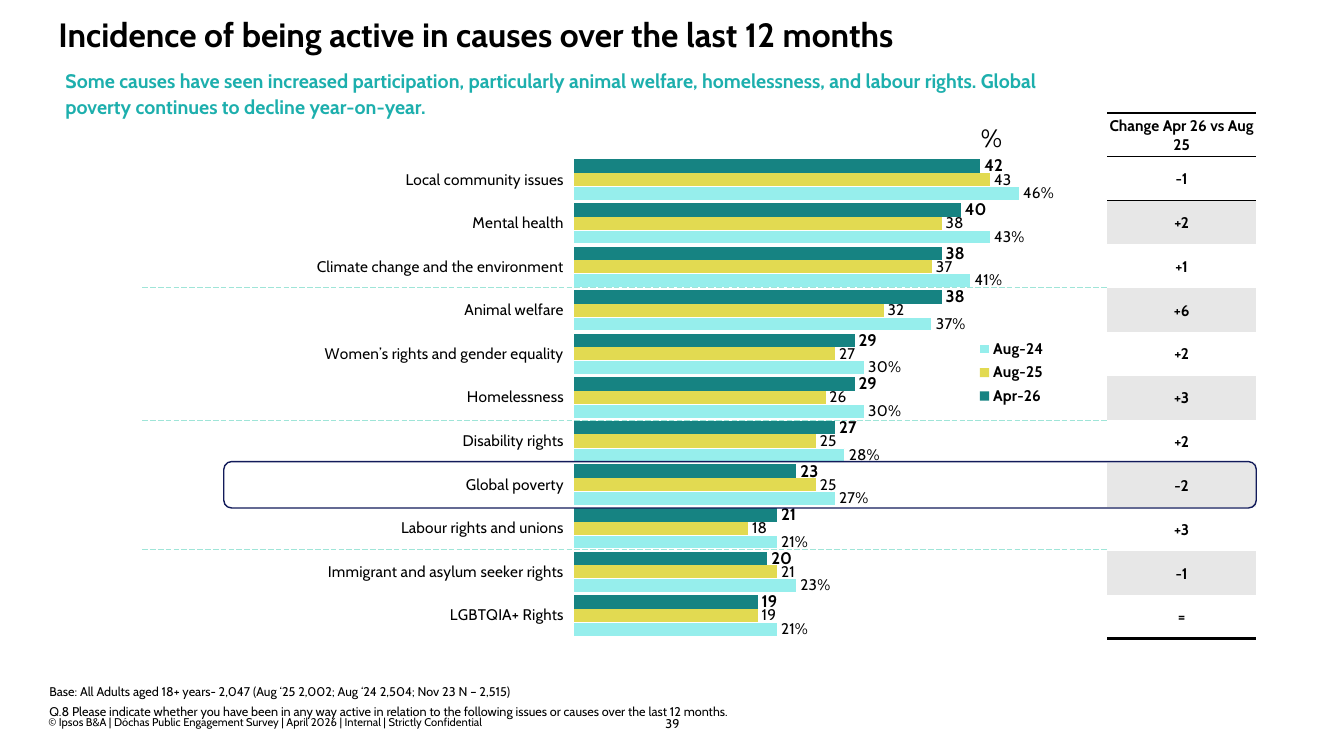
from lxml.etree import SubElement
from pptx import Presentation
from pptx.chart.data import CategoryChartData
from pptx.dml.color import RGBColor
from pptx.enum.chart import XL_CHART_TYPE, XL_LABEL_POSITION, XL_LEGEND_POSITION
from pptx.enum.dml import MSO_LINE
from pptx.enum.shapes import MSO_CONNECTOR, MSO_SHAPE
from pptx.enum.text import MSO_ANCHOR, PP_ALIGN
from pptx.oxml import parse_xml
from pptx.oxml.ns import nsdecls, qn
from pptx.util import Pt

PX = 9144  # EMU per px, 100 px to the inch
FONT = "Cabin"
BLACK = RGBColor(0, 0, 0)
WHITE = RGBColor(0xFF, 0xFF, 0xFF)
GREY = RGBColor(0xE7, 0xE7, 0xE7)
TURQUOISE = RGBColor(0x1D, 0xAF, 0xAD)
MINT = RGBColor(0x9F, 0xE5, 0xD8)
NAVY = RGBColor(0x12, 0x1B, 0x5A)
TEAL = RGBColor(0x16, 0x83, 0x82)
YELLOW = RGBColor(0xE2, 0xDA, 0x51)
AQUA = RGBColor(0x96, 0xEE, 0xEC)

# Wave name, bar colour, label number format
WAVES = [("Apr-26", TEAL, "#,##0"), ("Aug-25", YELLOW, "General"), ("Aug-24", AQUA, '#"%"')]
# Cause, one value per wave, change on the year
CAUSES = [
    ("Local community issues", (42, 43, 46), "-1"),
    ("Mental health", (40, 38, 43), "+2"),
    ("Climate change and the environment", (38, 37, 41), "+1"),
    ("Animal welfare", (38, 32, 37), "+6"),
    ("Women’s rights and gender equality", (29, 27, 30), "+2"),
    ("Homelessness", (29, 26, 30), "+3"),
    ("Disability rights", (27, 25, 28), "+2"),
    ("Global poverty", (23, 25, 27), "-2"),
    ("Labour rights and unions", (21, 18, 21), "+3"),
    ("Immigrant and asylum seeker rights", (20, 21, 23), "-1"),
    ("LGBTQIA+ Rights", (19, 19, 21), "="),
]


def px(*lengths):
    return [n * PX for n in lengths]


def style(font, size, color=BLACK, bold=False):
    font.name, font.size, font.bold = FONT, Pt(size), bold
    font.color.rgb = color


def add_text(slide, box, lines, size, color=BLACK, bold=False, align=PP_ALIGN.LEFT,
             spacing=1.0, after=0, inset=(10, 5), anchor=MSO_ANCHOR.TOP):
    tf = slide.shapes.add_textbox(*px(*box)).text_frame
    tf.word_wrap = True
    tf.vertical_anchor = anchor
    tf.margin_left = tf.margin_right = inset[0] * PX
    tf.margin_top = tf.margin_bottom = inset[1] * PX
    for i, line in enumerate(lines):
        p = tf.paragraphs[0] if i == 0 else tf.add_paragraph()
        p.text = line
        p.alignment, p.line_spacing, p.space_after = align, spacing, Pt(after)
        style(p.font, size, color, bold)


def add_title(slide, box, text):
    title = slide.shapes.title
    title.left, title.top, title.width, title.height = px(*box)
    tf = title.text_frame
    tf.text = text
    tf.vertical_anchor = MSO_ANCHOR.TOP
    p = tf.paragraphs[0]
    p.alignment, p.line_spacing = PP_ALIGN.LEFT, 0.9
    style(p.font, 24, bold=True)


def set_layout(parent, index, inner=False, **fractions):
    """Place a chart part by fractions of the chart area."""
    for old in parent.findall(qn("c:layout")):
        parent.remove(old)
    layout = parse_xml(f"<c:layout {nsdecls('c')}><c:manualLayout/></c:layout>")
    settings = {"layoutTarget": "inner"} if inner else {}
    settings.update(xMode="edge", yMode="edge", **fractions)
    for name, value in settings.items():
        SubElement(layout[0], qn(f"c:{name}")).set("val", str(value))
    parent.insert(index, layout)


def add_causes_chart(slide, box):
    data = CategoryChartData()
    data.categories = [cause for cause, _, _ in CAUSES]
    for i, (name, _, _) in enumerate(WAVES):
        data.add_series(name, [values[i] for _, values, _ in CAUSES])
    chart = slide.shapes.add_chart(XL_CHART_TYPE.BAR_CLUSTERED, *px(*box), data).chart
    chart.has_title = False
    style(chart.font, 11)

    # Axes
    chart.category_axis.reverse_order = True
    chart.category_axis.format.line.fill.background()
    axis = chart.value_axis
    axis.minimum_scale, axis.maximum_scale = 0, 50
    axis.has_major_gridlines = False
    axis.visible = False

    # Bars and their labels
    plot = chart.plots[0]
    plot.gap_width, plot.overlap, plot.vary_by_categories = 20, 0, False
    for series, (name, color, number_format) in zip(plot.series, WAVES):
        series.format.fill.solid()
        series.format.fill.fore_color.rgb = color
        labels = series.data_labels
        labels.show_value = True
        labels.position = XL_LABEL_POSITION.OUTSIDE_END
        labels.number_format, labels.number_format_is_linked = number_format, False
        latest = name == WAVES[0][0]
        style(labels.font, 12 if latest else 11, bold=latest)
    series.format.line.color.rgb = WHITE
    series.format.line.width = Pt(0.75)

    # Legend and plot position
    chart.has_legend = True
    legend = chart.legend
    legend.position = XL_LEGEND_POSITION.RIGHT
    legend.include_in_layout = False
    style(legend.font, 11, bold=True)
    set_layout(legend._element, 1, x=0.9, y=0.39, w=0.09, h=0.15)
    plot_area = chart._chartSpace.find(".//" + qn("c:plotArea"))
    set_layout(plot_area, 0, inner=True, x=0.536, y=0.034, w=0.452, h=0.963)


def add_border(cell, side, width):
    cell._tc.get_or_add_tcPr().insert(0, parse_xml(
        f'<a:ln{side} {nsdecls("a")} w="{Pt(width)}"><a:solidFill>'
        f'<a:srgbClr val="{BLACK}"/></a:solidFill></a:ln{side}>'))


def add_change_table(slide, box):
    texts = ["Change Apr 26 vs Aug 25"] + [change for _, _, change in CAUSES]
    table = slide.shapes.add_table(len(texts), 1, *px(*box)).table
    table.first_row = table.horz_banding = False
    no_grid = "{2D5ABB26-0587-4C30-8999-92F81FD0307C}"
    table._tbl.tblPr.find(qn("a:tableStyleId")).text = no_grid
    for i, text in enumerate(texts):
        cell = table.cell(i, 0)
        cell.margin_left = cell.margin_right = cell.margin_top = PX
        cell.margin_bottom = 0
        cell.vertical_anchor = MSO_ANCHOR.MIDDLE
        cell.fill.solid()
        cell.fill.fore_color.rgb = GREY if i and i % 2 == 0 else WHITE
        p = cell.text_frame.paragraphs[0]
        p.text, p.alignment = text, PP_ALIGN.CENTER
        style(p.font, 11, bold=True)
    # Bottom borders go in first, so that top ones precede them
    for row, side, width in [(0, "B", 0.5), (0, "T", 2), (1, "B", 0.5), (1, "T", 0.5),
                             (len(texts) - 1, "B", 2)]:
        add_border(table.cell(row, 0), side, width)


def add_divider(slide, left, right, y):
    line = slide.shapes.add_connector(MSO_CONNECTOR.STRAIGHT, *px(left, y, right, y))
    line.line.color.rgb = MINT
    line.line.width = Pt(0.5)
    line.line.dash_style = MSO_LINE.LONG_DASH
    SubElement(line._element.spPr, qn("a:effectLst"))


def add_highlight(slide, box):
    sp = slide.shapes.add_shape(MSO_SHAPE.ROUNDED_RECTANGLE, *px(*box))
    sp.shadow.inherit = False
    sp.fill.background()
    sp.line.color.rgb = NAVY
    sp.line.width = Pt(1)


def add_footer(slide, left, top):
    add_text(slide, (left + 592, top, 54, 15), ["39"], 9, align=PP_ALIGN.CENTER,
             spacing=1.1, inset=(0, 0))
    add_text(slide, (left, top + 1, 610, 13),
             ["© Ipsos B&A | Dóchas Public Engagement Survey | April 2026 | Internal | "
              "Strictly Confidential"], 8, inset=(0, 0), anchor=MSO_ANCHOR.BOTTOM)


def main():
    prs = Presentation()
    prs.slide_width, prs.slide_height = px(1333, 750)
    slide = prs.slides.add_slide(prs.slide_layouts[5])

    add_footer(slide, 48, 709)
    add_change_table(slide, (1098, 112, 148, 522))
    add_title(slide, (48, 13, 1234, 58),
              "Incidence of being active in causes over the last 12 months")
    add_text(slide, (55, 61, 1022, 66),
             ["Some causes have seen increased participation, particularly animal welfare, "
              "homelessness, and labour rights. Global poverty continues to decline "
              "year-on-year."], 14, TURQUOISE, bold=True, spacing=1.1, after=4)
    add_text(slide, (49, 676, 1022, 36),
             ["Base: All Adults aged 18+ years- 2,047 (Aug ‘25 2,002; Aug ‘24 2,504; "
              "Nov 23 N – 2,515)",
              "Q.8 Please indicate whether you have been in any way active in relation to "
              "the following issues or causes over the last 12 months."],
             9, spacing=1.15, after=2, inset=(0, 0))
    add_causes_chart(slide, (0, 140, 1062, 494))
    add_text(slide, (963, 116, 41, 40), ["%"], 18)
    for y in (285, 417, 545):
        add_divider(slide, 141, 1098, y)
    add_highlight(slide, (222, 458, 1024, 46))
    prs.save("out.pptx")


if __name__ == "__main__":
    main()
